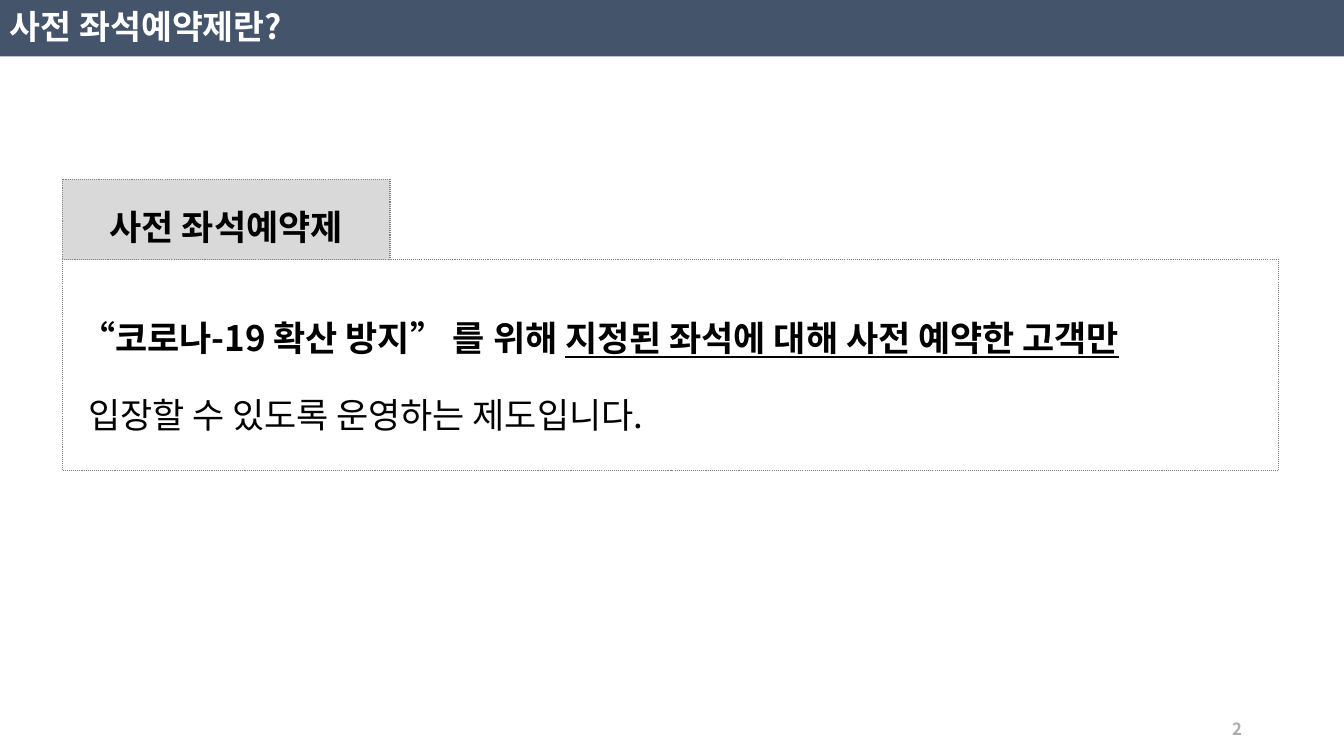
"""Build the slide that explains the advance seat reservation system."""
from dataclasses import dataclass
from typing import Optional

from lxml.etree import SubElement
from pptx import Presentation
from pptx.dml.color import RGBColor
from pptx.enum.dml import MSO_LINE
from pptx.enum.shapes import MSO_SHAPE
from pptx.enum.text import MSO_ANCHOR, PP_ALIGN
from pptx.oxml.ns import qn
from pptx.slide import Slide
from pptx.text.text import TextFrame
from pptx.util import Cm, Pt

FONT = "Noto Sans CJK KR"
COLORS = {
    "banner": "44546A",
    "label": "D9D9D9",
    "border": "808080",
    "number": "AFABAB",
    "white": "FFFFFF",
    "black": "000000",
}


@dataclass(frozen=True)
class Run:
    text: str
    size: float = 25
    color: str = "black"
    bold: bool = True
    underline: bool = False


@dataclass(frozen=True)
class Line:
    runs: tuple[Run, ...]
    align: PP_ALIGN = PP_ALIGN.LEFT
    spacing: float = 1.5
    before: float = 10
    indent: float = 0


@dataclass(frozen=True)
class Panel:
    left: float
    top: float
    width: float
    height: float
    lines: tuple[Line, ...]
    fill: Optional[str] = None
    border: Optional[str] = None
    anchor: MSO_ANCHOR = MSO_ANCHOR.MIDDLE


PANELS = (
    Panel(0, 0, 33.87, 1.42, fill="banner", lines=(
        Line((Run("사전 좌석예약제란?", size=24, color="white"),), spacing=0.9, before=0),
    )),
    Panel(1.57, 6.55, 30.66, 5.31, border="border", lines=(
        Line((
            Run("“코로나-19 확산 방지” 를 위해 "),
            Run("지정된 좌석에 대해 사전 예약한 고객만", underline=True),
        ), indent=0.2),
        Line((Run("입장할 수 있도록 운영하는 제도입니다.", bold=False),), indent=0.4),
    )),
    Panel(23.93, 17.86, 7.62, 1.02, lines=(
        Line((Run("2", size=12, color="number"),), align=PP_ALIGN.RIGHT, spacing=1, before=0),
    )),
    Panel(1.57, 4.52, 8.26, 2.03, fill="label", border="border", anchor=MSO_ANCHOR.TOP, lines=(
        Line((Run("사전 좌석예약제"),), align=PP_ALIGN.CENTER),
    )),
)


def rgb(name: str) -> RGBColor:
    return RGBColor.from_string(COLORS[name])


def add_run(paragraph, text: str, *, size: float, color: str, bold: bool, underline: bool) -> None:
    run = paragraph.add_run()
    run.text = text
    font = run.font
    font.name = FONT
    font.size = Pt(size)
    font.bold = bold
    font.underline = underline
    font.color.rgb = rgb(color)
    SubElement(font._element, qn("a:ea")).set("typeface", FONT)


def write_lines(frame: TextFrame, lines: tuple[Line, ...]) -> None:
    for index, line in enumerate(lines):
        paragraph = frame.add_paragraph() if index else frame.paragraphs[0]
        paragraph.alignment = line.align
        paragraph.line_spacing = line.spacing
        paragraph.space_before = Pt(line.before)
        paragraph._p.get_or_add_pPr().set("marL", str(Cm(line.indent)))
        for run in line.runs:
            add_run(paragraph, run.text, size=run.size, color=run.color,
                    bold=run.bold, underline=run.underline)


def add_panel(slide: Slide, panel: Panel) -> None:
    box = (Cm(panel.left), Cm(panel.top), Cm(panel.width), Cm(panel.height))
    if panel.fill or panel.border:
        shape = slide.shapes.add_shape(MSO_SHAPE.RECTANGLE, *box)
        shape.shadow.inherit = False
        if panel.fill:
            shape.fill.solid()
            shape.fill.fore_color.rgb = rgb(panel.fill)
        else:
            shape.fill.background()
        if panel.border:
            shape.line.color.rgb = rgb(panel.border)
            shape.line.width = Pt(0.75)
            shape.line.dash_style = MSO_LINE.ROUND_DOT
        else:
            shape.line.fill.background()
    else:
        shape = slide.shapes.add_textbox(*box)
    shape.text_frame.word_wrap = True
    shape.text_frame.vertical_anchor = panel.anchor
    write_lines(shape.text_frame, panel.lines)


def main() -> None:
    presentation = Presentation()
    presentation.slide_width = Cm(33.87)
    presentation.slide_height = Cm(19.05)
    slide = presentation.slides.add_slide(presentation.slide_layouts[6])
    for panel in PANELS:
        add_panel(slide, panel)
    presentation.save("out.pptx")


if __name__ == "__main__":
    main()
